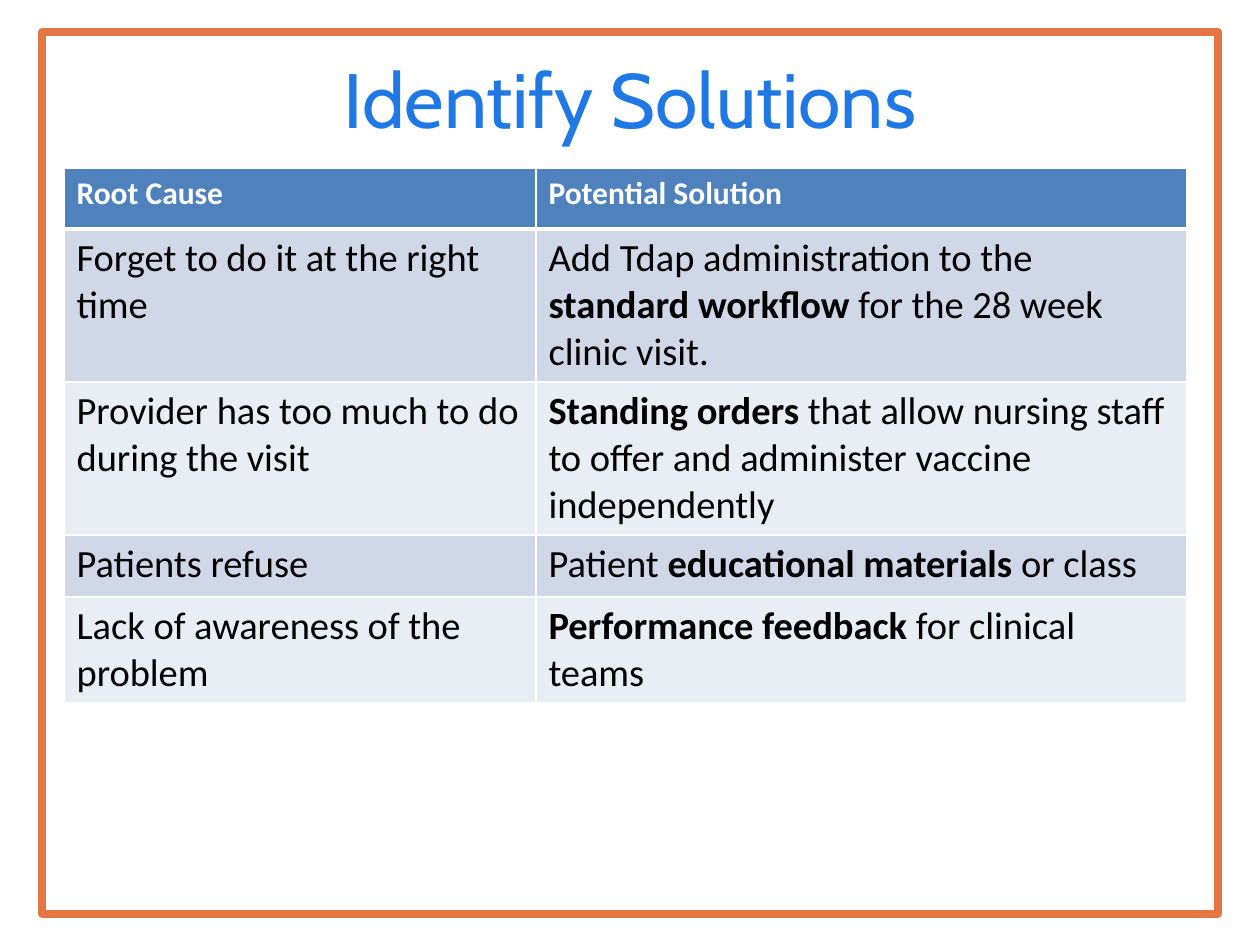
from lxml.etree import SubElement
from pptx import Presentation
from pptx.dml.color import RGBColor
from pptx.enum.shapes import MSO_SHAPE
from pptx.enum.text import MSO_ANCHOR, PP_ALIGN
from pptx.oxml.ns import qn
from pptx.util import Emu, Pt

PX_PER_INCH = 126
ORANGE = RGBColor(0xE5, 0x75, 0x43)
TITLE_BLUE = RGBColor(0x1F, 0x78, 0xE3)
HEADER_BLUE = RGBColor(0x4F, 0x81, 0xBD)
BANDS = (RGBColor(0xD0, 0xD8, 0xE8), RGBColor(0xE9, 0xED, 0xF4))
WHITE = RGBColor(0xFF, 0xFF, 0xFF)
BLACK = RGBColor(0x00, 0x00, 0x00)

HEADER_FORMAT = {"name": "Calibri", "size": Pt(18), "bold": True}
BODY_FORMAT = {"name": "Calibri", "size": Pt(22), "bold": False}
TITLE_FORMAT = {"name": "Cabin", "size": Pt(44), "bold": False}

COLUMN_WIDTHS = (472, 651)
ROW_HEIGHTS = (61, 153, 153, 62, 106)
# A cell is a list of (text, is bold) runs.
HEADER = [[("Root Cause", True)], [("Potential Solution", True)]]
SOLUTIONS = [
    [[("Forget to do it at the right time", False)],
     [("Add Tdap administration to the ", False), ("standard workflow ", True),
      ("for the 28 week clinic visit.", False)]],
    [[("Provider has too much to do during the visit", False)],
     [("Standing orders ", True),
      ("that allow nursing staff to offer and administer vaccine independently", False)]],
    [[("Patients refuse", False)],
     [("Patient ", False), ("educational materials ", True), ("or class", False)]],
    [[("Lack of awareness of the problem", False)],
     [("Performance feedback ", True), ("for clinical teams", False)]],
]


def px(length):
    return Emu(round(length * 914400 / PX_PER_INCH))


def add_run(paragraph, text, color, text_format):
    run = paragraph.add_run()
    run.text = text
    for name, value in text_format.items():
        setattr(run.font, name, value)
    run.font.color.rgb = color


def add_frame(slide):
    frame = slide.shapes.add_shape(MSO_SHAPE.RECTANGLE, px(42), px(32), px(1176), px(882))
    frame.shadow.inherit = False
    frame.fill.background()
    frame.line.color.rgb = ORANGE
    frame.line.width = Pt(4.25)


def add_title(slide, text):
    title = slide.shapes.add_textbox(px(63), px(38), px(1134), px(120))
    text_frame = title.text_frame
    text_frame.word_wrap = True
    text_frame.vertical_anchor = MSO_ANCHOR.MIDDLE
    paragraph = text_frame.paragraphs[0]
    paragraph.alignment = PP_ALIGN.CENTER
    add_run(paragraph, text, TITLE_BLUE, TITLE_FORMAT)


def set_borders(cell, widths):
    """Draw white borders; widths maps a side (L, R, T, B) to points."""
    properties = cell._tc.get_or_add_tcPr()
    for position, (side, width) in enumerate(widths.items()):
        line = SubElement(properties, qn(f"a:ln{side}"), w=str(Pt(width)))
        properties.insert(position, line)
        fill = SubElement(line, qn("a:solidFill"))
        SubElement(fill, qn("a:srgbClr"), val=str(WHITE))


def fill_cell(cell, runs, fill, color, text_format, borders):
    cell.fill.solid()
    cell.fill.fore_color.rgb = fill
    set_borders(cell, borders)
    for text, bold in runs:
        add_run(cell.text_frame.paragraphs[0], text, color, {**text_format, "bold": bold})


def add_solution_table(slide):
    rows = [HEADER] + SOLUTIONS
    table = slide.shapes.add_table(
        len(rows), len(COLUMN_WIDTHS), px(64), px(168),
        px(sum(COLUMN_WIDTHS)), px(sum(ROW_HEIGHTS))).table
    for column, width in zip(table.columns, COLUMN_WIDTHS):
        column.width = px(width)
    for index, (row, height, contents) in enumerate(zip(table.rows, ROW_HEIGHTS, rows)):
        row.height = px(height)
        is_header = index == 0
        fill = HEADER_BLUE if is_header else BANDS[(index - 1) % 2]
        color = WHITE if is_header else BLACK
        text_format = HEADER_FORMAT if is_header else BODY_FORMAT
        borders = {"L": 1, "R": 1, "T": 3 if index == 1 else 1, "B": 3 if is_header else 1}
        for cell, runs in zip(row.cells, contents):
            fill_cell(cell, runs, fill, color, text_format, borders)


def main():
    presentation = Presentation()
    presentation.slide_width = px(1260)
    presentation.slide_height = px(945)
    slide = presentation.slides.add_slide(presentation.slide_layouts[6])
    add_frame(slide)
    add_title(slide, "Identify Solutions")
    add_solution_table(slide)
    presentation.save("out.pptx")


if __name__ == "__main__":
    main()
